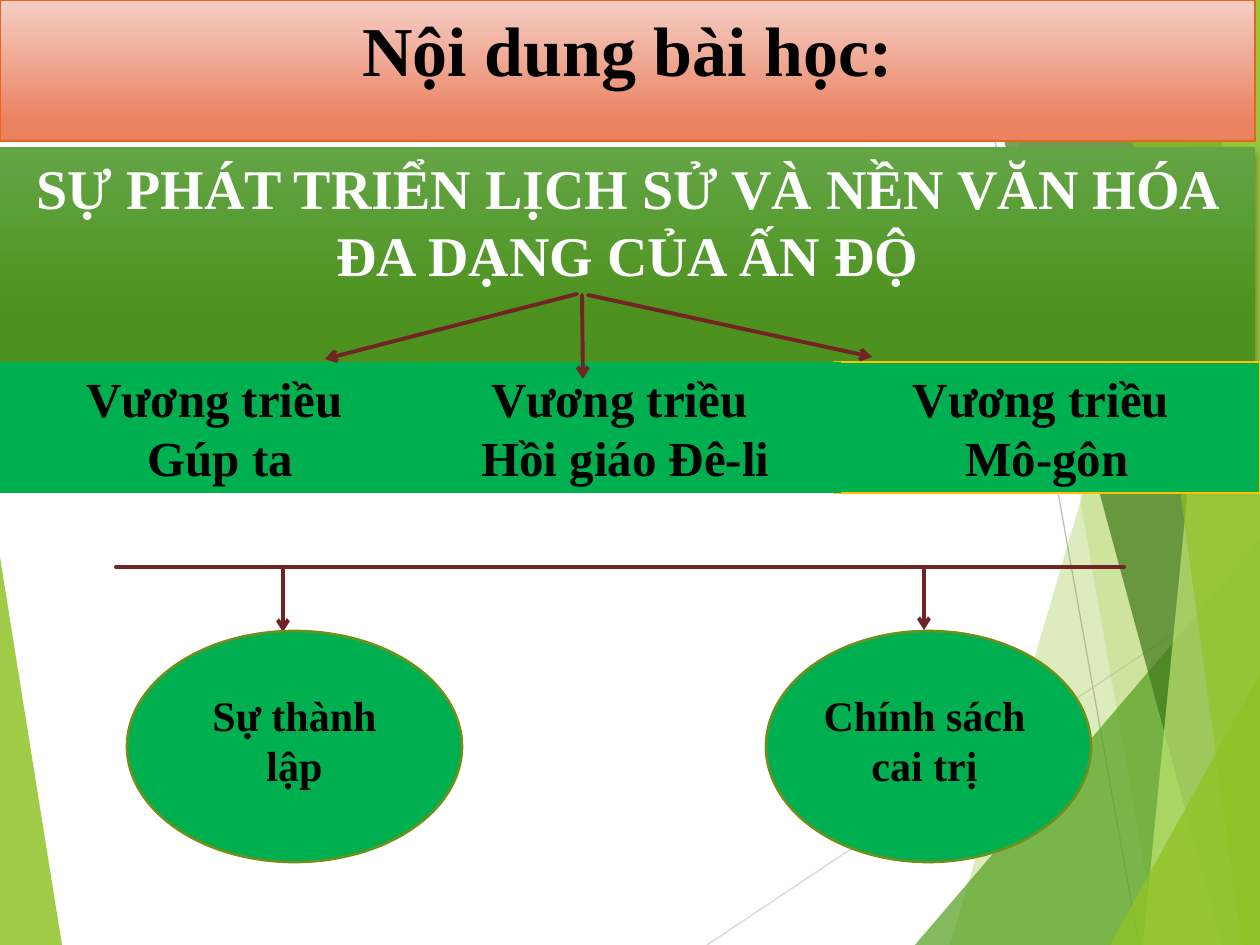
from lxml import etree
from pptx import Presentation
from pptx.dml.color import RGBColor
from pptx.enum.shapes import MSO_CONNECTOR, MSO_SHAPE
from pptx.enum.text import MSO_ANCHOR, MSO_AUTO_SIZE, PP_ALIGN
from pptx.oxml.ns import qn
from pptx.util import Emu, Pt

RECT, OVAL = MSO_SHAPE.RECTANGLE, MSO_SHAPE.OVAL
STRAIGHT = MSO_CONNECTOR.STRAIGHT
TOP, MIDDLE = MSO_ANCHOR.TOP, MSO_ANCHOR.MIDDLE
NO_FIT = MSO_AUTO_SIZE.NONE
CENTER = PP_ALIGN.CENTER

EMU_PER_PX = 914400 / 126
WIDTH, HEIGHT = 1260, 945
FONT = "Times New Roman"
TITLE_ONLY = 5

COLORS = {
    "lime": "90C226", "leaf": "54A021", "forest": "3F7819", "pale": "C0E474",
    "ray": "D9D9D9", "ray dark": "BFBFBF",
    "box": "00B050", "gold": "FFC000", "olive": "6B901C", "arrow": "722424",
    "topic top": "63A545", "topic bottom": "4D921E",
    "title top": "F5CEC5", "title bottom": "EA815F", "title edge": "E76618",
    "black": "000000", "white": "FFFFFF",
}

# Right-hand facets: top x, top y, bottom x, colour, opacity in percent
FACETS = [
    (1228, 0, 950, "lime", 30),
    (993, 0, 1158, "lime", 20),
    (1260, 541, 915, "leaf", 72),
    (966, 0, 1222, "forest", 70),
    (1236, 0, 1143, "pale", 70),
    (1113, 0, 1242, "lime", 65),
    (1260, 674, 1110, "lime", 80),
]

# Dynasty boxes from back to front: left, width, border, lines
DYNASTIES = [
    (834, 426, "gold", ["Vương triều ", "Mô-gôn"]),
    (410, 431, None, ["Vương triều ", "Hồi giáo Đê-li"]),
    (0, 441, None, ["Vương triều ", "Gúp ta"]),
]

# Aspects: oval left, oval width, label left, arrow x, arrow top, lines
ASPECTS = [
    (127, 335, 179, 283, 569, ["Sự thành lập"]),
    (766, 325, 809, 924, 567, ["Chính sách", "cai trị"]),
]


def px(*lengths):
    return [Emu(round(length * EMU_PER_PX)) for length in lengths]


def rgb(name):
    return RGBColor.from_string(COLORS[name])


def set_line(shape, color, width=1.5):
    if color is None:
        shape.line.fill.background()
    else:
        shape.line.color.rgb = rgb(color)
        shape.line.width = Pt(width)


def set_gradient(shape, top, bottom, end):
    shape.fill.gradient()
    shape.fill.gradient_angle = 270
    for stop, color, position in zip(shape.fill.gradient_stops, (top, bottom), (0, end)):
        stop.color.rgb = rgb(color)
        stop.position = position


def set_text(shape, lines, size, color="black", anchor=TOP):
    frame = shape.text_frame
    frame.word_wrap = True
    frame.auto_size = NO_FIT
    frame.vertical_anchor = anchor
    frame.text = "\n".join(lines)
    for paragraph in frame.paragraphs:
        paragraph.alignment = CENTER
        font = paragraph.font
        font.name, font.size, font.bold = FONT, Pt(size), True
        font.color.rgb = rgb(color)


def add_box(slide, kind, bounds, fill=None, border=None):
    box = slide.shapes.add_shape(kind, *px(*bounds))
    box.shadow.inherit = False
    if fill:
        box.fill.solid()
        box.fill.fore_color.rgb = rgb(fill)
    set_line(box, border)
    return box


def add_line(slide, start, end, color="arrow", width=2.25, arrow=False):
    line = slide.shapes.add_connector(STRAIGHT, *px(*start, *end))
    set_line(line, color, width)
    outline = line.line._get_or_add_ln()
    if color == "arrow":
        outline.set("cap", "rnd")
    if arrow:
        etree.SubElement(outline, qn("a:tailEnd"), type="arrow")
    etree.SubElement(line._element.spPr, qn("a:effectLst"))


def add_facet(slide, points, color, opacity):
    builder = slide.shapes.build_freeform(*points[0], scale=EMU_PER_PX)
    builder.add_line_segments(points[1:], close=True)
    facet = builder.convert_to_shape()
    facet.shadow.inherit = False
    facet.fill.solid()
    facet.fill.fore_color.rgb = rgb(color)
    set_line(facet, None)
    color_node = facet._element.spPr.find(qn("a:solidFill"))[0]
    etree.SubElement(color_node, qn("a:alpha"), val=str(opacity * 1000))


def add_soft_shadow(shape):
    effects = shape._element.spPr.find(qn("a:effectLst"))
    shadow = etree.SubElement(effects, qn("a:outerShdw"), blurRad=str(Pt(4)),
                              dist=str(Pt(3)), dir="5400000", rotWithShape="0")
    color_node = etree.SubElement(shadow, qn("a:srgbClr"), val=COLORS["black"])
    etree.SubElement(color_node, qn("a:alpha"), val="35000")


def add_background(slide):
    add_facet(slide, [(0, 557), (62, HEIGHT), (0, HEIGHT)], "lime", 85)
    add_line(slide, (707, HEIGHT), (WIDTH, 576), "ray", 0.75)
    add_line(slide, (970, 0), (1139, HEIGHT), "ray dark", 0.75)
    for top_x, top_y, bottom_x, color, opacity in FACETS:
        points = [(top_x, top_y), (bottom_x, HEIGHT), (WIDTH, HEIGHT), (WIDTH, top_y)]
        add_facet(slide, points, color, opacity)


def add_topic(slide):
    topic = add_box(slide, RECT, (0, 147, 1255, 217))
    set_gradient(topic, "topic top", "topic bottom", 0.78)
    add_soft_shadow(topic)
    set_text(topic, ["SỰ PHÁT TRIỂN LỊCH SỬ VÀ NỀN VĂN HÓA ĐA DẠNG CỦA ẤN ĐỘ"], 32, "white")


def add_dynasties(slide):
    for left, width, border, lines in DYNASTIES:
        dynasty = add_box(slide, RECT, (left, 362, width, 131), "box", border)
        set_text(dynasty, lines, 28, anchor=MIDDLE)
    # Arrows from the topic to each dynasty
    add_line(slide, (577, 294), (325, 359), arrow=True)
    add_line(slide, (588, 295), (872, 357), arrow=True)
    add_line(slide, (582, 295), (583, 379), arrow=True)


def add_aspects(slide):
    add_line(slide, (116, 567), (1124, 567))
    for left, width, label_left, arrow_x, arrow_top, lines in ASPECTS:
        add_line(slide, (arrow_x, arrow_top), (arrow_x, arrow_top + 63), arrow=True)
        add_box(slide, OVAL, (left, 631, width, 231), "box", "olive")
        label = slide.shapes.add_textbox(*px(label_left, 683, 231, 115))
        set_text(label, lines, 24)


def add_title(slide):
    title = slide.shapes.title
    title.left, title.top, title.width, title.height = px(0, 0, 1255, 141)
    set_gradient(title, "title top", "title bottom", 0.88)
    set_line(title, "title edge", 1)
    set_text(title, ["Nội dung bài học:"], 40)
    # Bring the title in front of the background
    slide.shapes._spTree.append(title._element)


def main():
    deck = Presentation()
    deck.slide_width, deck.slide_height = px(WIDTH, HEIGHT)
    slide = deck.slides.add_slide(deck.slide_layouts[TITLE_ONLY])
    add_background(slide)
    add_topic(slide)
    add_dynasties(slide)
    add_aspects(slide)
    add_title(slide)
    deck.save("out.pptx")


if __name__ == "__main__":
    main()
